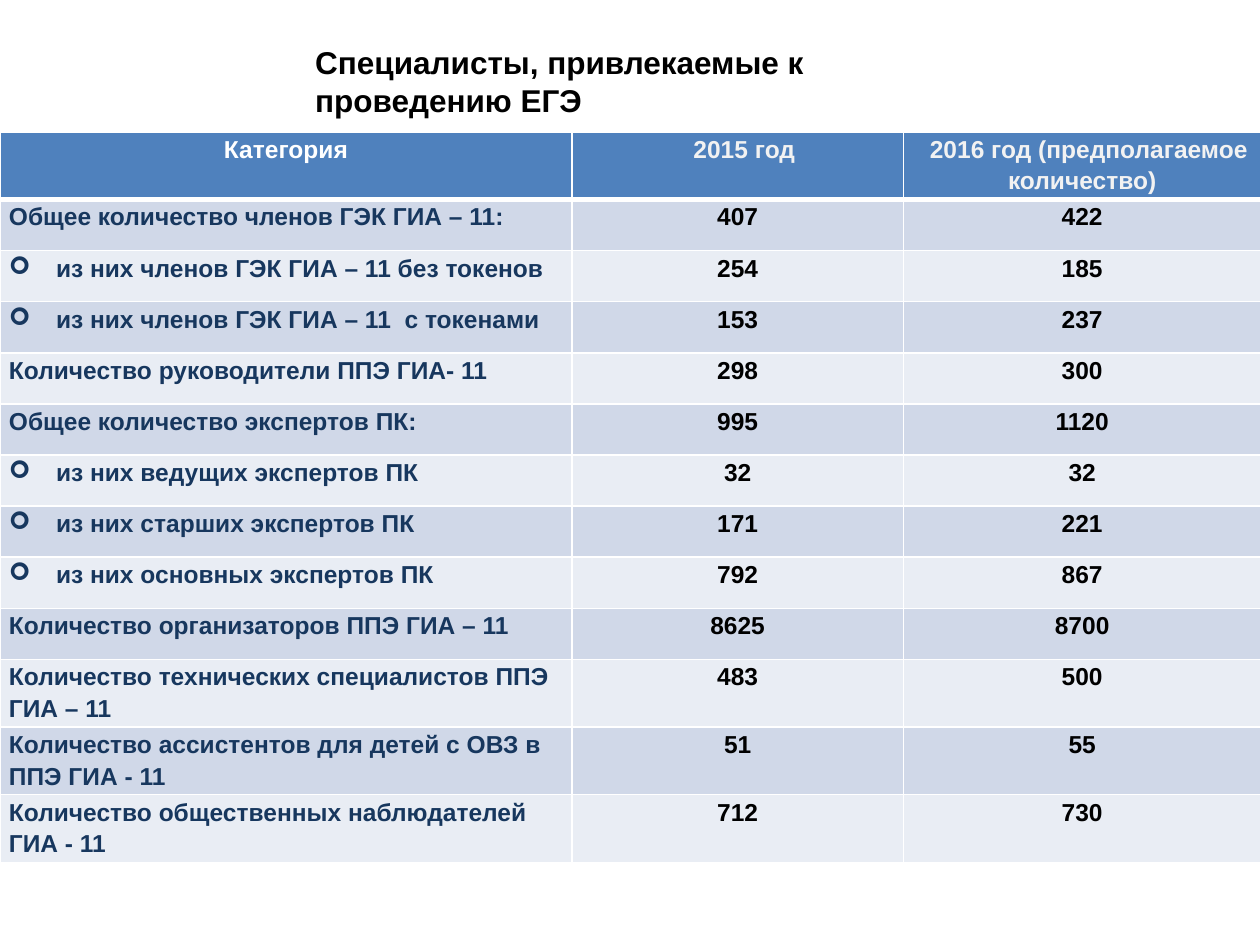
from lxml.etree import SubElement
from pptx import Presentation
from pptx.dml.color import RGBColor
from pptx.enum.text import MSO_ANCHOR as Anchor, MSO_AUTO_SIZE as AutoSize, PP_ALIGN as Align
from pptx.oxml.ns import qn
from pptx.util import Cm, Pt

WHITE = RGBColor(0xFF, 0xFF, 0xFF)
BLACK = RGBColor(0x00, 0x00, 0x00)
PALE = RGBColor(0xF2, 0xF2, 0xF2)
NAVY = RGBColor(0x17, 0x37, 0x5E)
HEADER_BLUE = RGBColor(0x4F, 0x81, 0xBD)
BANDS = (RGBColor(0xD0, 0xD8, 0xE8), RGBColor(0xE9, 0xED, 0xF4))

TITLE = "Специалисты, привлекаемые к проведению ЕГЭ"
HEADINGS = ("Категория", "2015 год", "2016 год (предполагаемое количество)")
# Category, is it a sub-item, 2015, 2016
STAFF = (
    ("Общее количество членов ГЭК ГИА – 11:", False, 407, 422),
    ("из них членов ГЭК ГИА – 11 без токенов", True, 254, 185),
    ("из них членов ГЭК ГИА – 11  с токенами", True, 153, 237),
    ("Количество руководители ППЭ ГИА- 11", False, 298, 300),
    ("Общее количество экспертов ПК:", False, 995, 1120),
    ("из них ведущих экспертов ПК", True, 32, 32),
    ("из них старших экспертов ПК", True, 171, 221),
    ("из них основных экспертов ПК", True, 792, 867),
    ("Количество организаторов ППЭ ГИА – 11", False, 8625, 8700),
    ("Количество технических специалистов ППЭ ГИА – 11", False, 483, 500),
    ("Количество ассистентов для детей с ОВЗ в ППЭ ГИА - 11", False, 51, 55),
    ("Количество общественных наблюдателей ГИА - 11", False, 712, 730),
)


class StaffSlide:
    font_name = "Arial"
    title_size = Pt(18)
    cell_size = Pt(14)
    thin, thick = Pt(1), Pt(3)

    def __init__(self, deck):
        self.slide = deck.slides.add_slide(deck.slide_layouts[5])

    def style(self, paragraph, size, color, align):
        paragraph.alignment = align
        font = paragraph.font
        font.name, font.size, font.bold = self.font_name, size, True
        font.color.rgb = color

    def title(self, text, left, top, width, height):
        title = self.slide.shapes.title
        title.left, title.top, title.width, title.height = left, top, width, height
        frame = title.text_frame
        frame.text = text
        frame.word_wrap = True
        frame.auto_size = AutoSize.SHAPE_TO_FIT_TEXT
        frame.vertical_anchor = Anchor.TOP
        self.style(frame.paragraphs[0], self.title_size, BLACK, Align.LEFT)

    def table(self, left, top, widths, row_height, row_count):
        table = self.slide.shapes.add_table(
            row_count, len(widths), left, top, sum(widths), row_height * row_count).table
        for column, width in zip(table.columns, widths):
            column.width = width
        return table

    def cell(self, cell, text, fill, color, align=Align.CENTER,
             indent=0, bullet=None, top=thin, bottom=thin):
        cell.margin_left = cell.margin_right = Cm(0.18)
        cell.margin_top = cell.margin_bottom = 0
        self.borders(cell, top, bottom)
        cell.fill.solid()
        cell.fill.fore_color.rgb = fill
        cell.text = text
        paragraph = cell.text_frame.paragraphs[0]
        paragraph.line_spacing = 1.15
        properties = paragraph._p.get_or_add_pPr()
        if bullet:
            properties.set("marL", str(indent))
            SubElement(properties, qn("a:buFont"), typeface="Wingdings")
            SubElement(properties, qn("a:buChar"), char=bullet)
        if indent:
            properties.set("indent", str(-indent if bullet else indent))
        self.style(paragraph, self.cell_size, color, align)

    def borders(self, cell, top, bottom):
        properties = cell._tc.get_or_add_tcPr()
        for side, width in zip("LRTB", (self.thin, self.thin, top, bottom)):
            line = SubElement(properties, qn(f"a:ln{side}"), w=str(width))
            fill = SubElement(line, qn("a:solidFill"))
            SubElement(fill, qn("a:srgbClr"), val=str(WHITE))


def main():
    deck = Presentation()
    deck.slide_width, deck.slide_height = Cm(25.4), Cm(19.05)
    page = StaffSlide(deck)

    # Title
    page.title(TITLE, Cm(6.1), Cm(0.74), Cm(13.94), Cm(1.02))

    # Table header
    staff = page.table(Cm(0), Cm(2.66), (Cm(11.53), Cm(6.68), Cm(7.21)),
                       Cm(1.03), len(STAFF) + 1)
    for column, heading in enumerate(HEADINGS):
        page.cell(staff.cell(0, column), heading, HEADER_BLUE,
                  PALE if column else WHITE,
                  indent=Cm(0.27) if column else 0, bottom=page.thick)

    # Staff rows in alternating bands
    for row, (category, is_part, *counts) in enumerate(STAFF, start=1):
        band = BANDS[(row - 1) % 2]
        top = page.thick if row == 1 else page.thin
        page.cell(staff.cell(row, 0), category, band, NAVY, Align.LEFT,
                  indent=Cm(0.95) if is_part else 0,
                  bullet="➢" if is_part else None, top=top)
        for column, count in enumerate(counts, start=1):
            page.cell(staff.cell(row, column), str(count), band, BLACK, top=top)

    deck.save("out.pptx")


if __name__ == "__main__":
    main()
